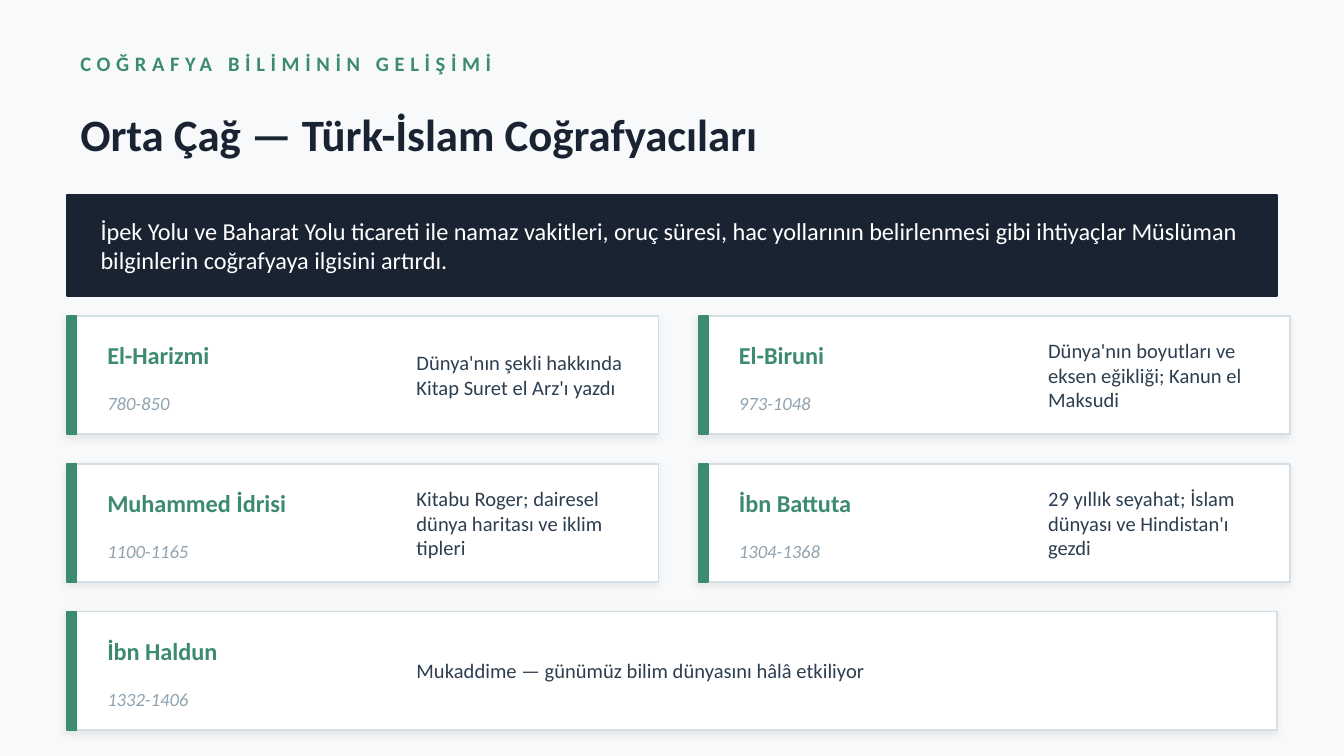
import pptx
import pptx.util
import pptx.dml.color
import pptx.enum.shapes
import pptx.enum.text
import pptx.oxml
import pptx.oxml.ns
from pptx.util import Pt

GREEN, NAVY, WHITE = "3D8B6E", "1A2332", "FFFFFF"
BORDER, GREY, SLATE, BACKGROUND = "D4DEE5", "8FA3B1", "2C3E50", "F7F9FB"

SECTION = "COĞRAFYA BİLİMİNİN GELİŞİMİ"
TITLE = "Orta Çağ — Türk-İslam Coğrafyacıları"
INTRO = ("İpek Yolu ve Baharat Yolu ticareti ile namaz vakitleri, oruç süresi, "
         "hac yollarının belirlenmesi gibi ihtiyaçlar Müslüman bilginlerin "
         "coğrafyaya ilgisini artırdı.")
SCHOLARS = [
    ("El-Harizmi", "780-850", "Dünya'nın şekli hakkında Kitap Suret el Arz'ı yazdı"),
    ("El-Biruni", "973-1048", "Dünya'nın boyutları ve eksen eğikliği; Kanun el Maksudi"),
    ("Muhammed İdrisi", "1100-1165", "Kitabu Roger; dairesel dünya haritası ve iklim tipleri"),
    ("İbn Battuta", "1304-1368", "29 yıllık seyahat; İslam dünyası ve Hindistan'ı gezdi"),
    ("İbn Haldun", "1332-1406", "Mukaddime — günümüz bilim dünyasını hâlâ etkiliyor"),
]

MARGIN, FULL_WIDTH = 36, 648
CARD_TOP, CARD_WIDTH, CARD_HEIGHT = 169.2, 316.8, 63.36
COLUMN_STEP, ROW_STEP = 338.4, 79.2

deck = pptx.Presentation()
deck.slide_width, deck.slide_height = Pt(720), Pt(405)
page = deck.slides.add_slide(deck.slide_layouts[6])


def color(value):
    return pptx.dml.color.RGBColor.from_string(value)


def add_text(text, left, top, width, height, size, fill, bold=False,
             italic=False, spacing=0, anchor="MIDDLE"):
    box = page.shapes.add_textbox(Pt(left), Pt(top), Pt(width), Pt(height))
    frame = box.text_frame
    frame.word_wrap = True
    frame.vertical_anchor = pptx.enum.text.MSO_ANCHOR[anchor]
    span = frame.paragraphs[0].add_run()
    span.text = text
    span.font.name, span.font.size = "Calibri", Pt(size)
    span.font.bold, span.font.italic = bold, italic
    span.font.color.rgb = color(fill)
    if spacing:
        span.font._element.set("spc", str(spacing * 100))


def add_box(left, top, width, height, fill, line, shadow=False):
    box = page.shapes.add_shape(pptx.enum.shapes.MSO_SHAPE.RECTANGLE,
                                Pt(left), Pt(top), Pt(width), Pt(height))
    box.fill.solid()
    box.fill.fore_color.rgb = color(fill)
    box.line.color.rgb = color(line)
    box.line.width = Pt(1)
    box.shadow.inherit = False
    if shadow:
        effects = box._element.spPr.find(pptx.oxml.ns.qn("a:effectLst"))
        effects.append(pptx.oxml.parse_xml(
            f'<a:outerShdw {pptx.oxml.ns.nsdecls("a")} blurRad="{Pt(4)}" dist="{Pt(2)}" '
            f'dir="{135 * 60000}" algn="bl" rotWithShape="0">'
            '<a:srgbClr val="000000"><a:alpha val="8000"/></a:srgbClr></a:outerShdw>'))


def add_card(scholar, left, top, width):
    name, years, work = scholar
    add_box(left, top, width, CARD_HEIGHT, WHITE, BORDER, shadow=True)
    add_box(left, top, 5.04, CARD_HEIGHT, GREEN, GREEN)
    add_text(name, left + 14.4, top, 158.4, 32.4, size=13, fill=GREEN,
             bold=True, anchor="BOTTOM")
    add_text(years, left + 14.4, top + 32.4, 158.4, 28.8, size=10, fill=GREY, italic=True)
    add_text(work, left + 180, top, width - 190.8, CARD_HEIGHT, size=11, fill=SLATE)


page.background.fill.solid()
page.background.fill.fore_color.rgb = color(BACKGROUND)

add_text(SECTION, MARGIN, 20.16, FULL_WIDTH, 27.36, size=11, fill=GREEN, bold=True, spacing=3)
add_text(TITLE, MARGIN, 51.84, FULL_WIDTH, 39.6, size=24, fill=NAVY, bold=True)
add_box(MARGIN, 104.4, FULL_WIDTH, 54, NAVY, NAVY)
add_text(INTRO, MARGIN + 10.8, 104.4, FULL_WIDTH - 21.6, 54, size=13, fill=WHITE)

for index, scholar in enumerate(SCHOLARS):
    row, column = divmod(index, 2)
    alone = column == 0 and index == len(SCHOLARS) - 1
    add_card(scholar, MARGIN + column * COLUMN_STEP, CARD_TOP + row * ROW_STEP,
             FULL_WIDTH if alone else CARD_WIDTH)

deck.save("out.pptx")
